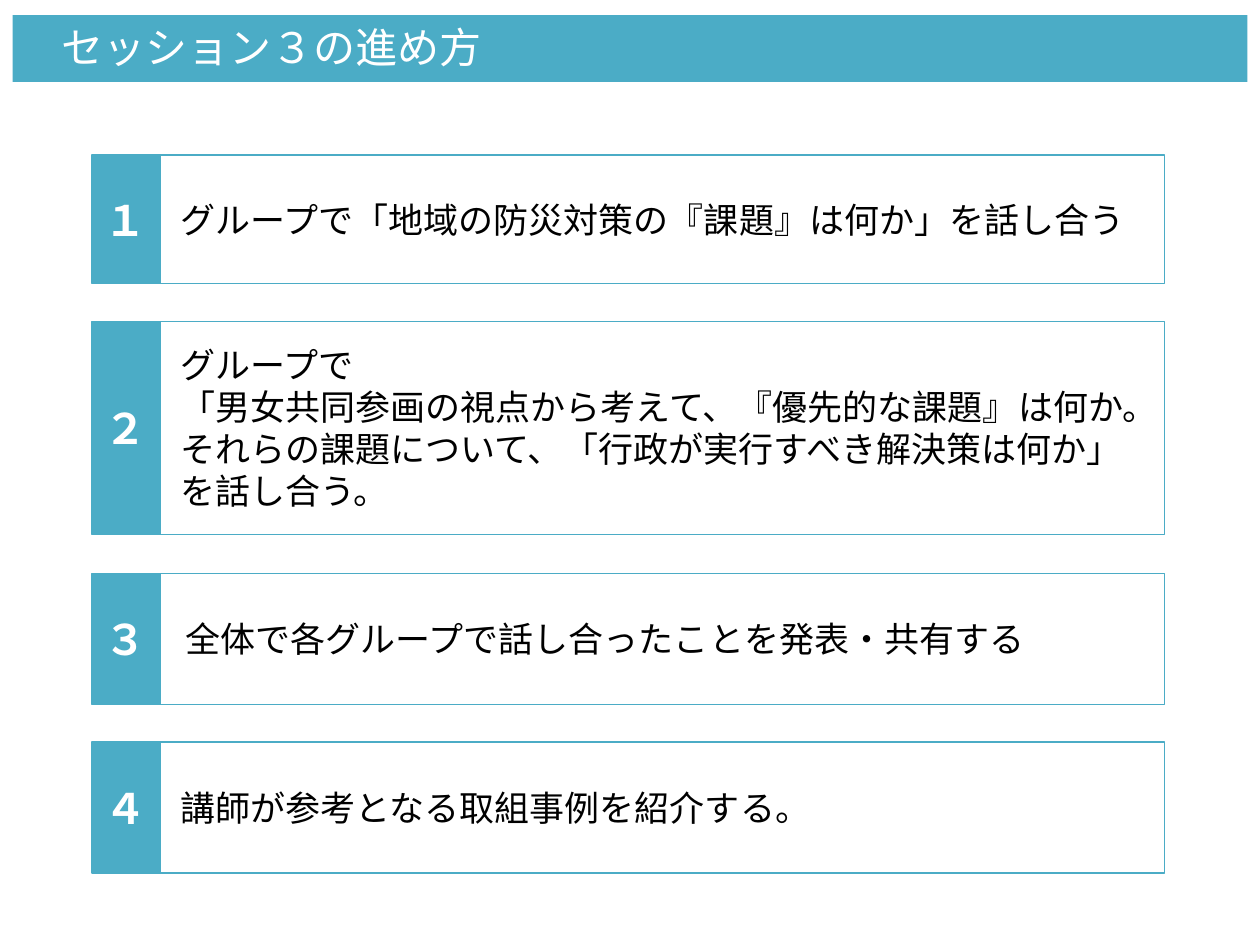
from pptx import Presentation
from pptx.dml.color import RGBColor
from pptx.enum.shapes import MSO_SHAPE
from pptx.enum.text import MSO_ANCHOR, PP_ALIGN
from pptx.util import Inches, Pt

RECTANGLE = MSO_SHAPE.RECTANGLE
MIDDLE = MSO_ANCHOR.MIDDLE
LEFT = PP_ALIGN.LEFT
CENTER = PP_ALIGN.CENTER

COLORS = {"accent": "4BACC6", "white": "FFFFFF", "black": "000000"}

STEPS = [
    ("１", "グループで「地域の防災対策の『課題』は何か」を話し合う", 1.23, 1.02, 0.2),
    (
        "２",
        "グループで\n「男女共同参画の視点から考えて、『優先的な課題』は何か。"
        "それらの課題について、「行政が実行すべき解決策は何か」を話し合う。",
        2.55, 1.69, 0.2,
    ),
    ("３", "全体で各グループで話し合ったことを発表・共有する", 4.55, 1.04, 0.24),
    ("４", "講師が参考となる取組事例を紹介する。", 5.89, 1.04, 0.2),
]


def color(name):
    return RGBColor.from_string(COLORS[name])


def write_text(shape, text, size=20, font="Calibri", ink="black", bold=False,
               align=LEFT, wrap=True, insets=(0.1, 0.05, 0.1, 0.05)):
    frame = shape.text_frame
    frame.word_wrap = wrap
    frame.vertical_anchor = MIDDLE
    (frame.margin_left, frame.margin_top,
     frame.margin_right, frame.margin_bottom) = map(Inches, insets)
    paragraph = frame.paragraphs[0]
    paragraph.text = text
    paragraph.alignment = align
    for run in paragraph.runs:
        run.font.name = font
        run.font.size = Pt(size)
        run.font.bold = bold
        run.font.color.rgb = color(ink)


class AgendaSlide:
    def __init__(self, slide, accent="accent", border=0.75):
        self.slide = slide
        self.accent = accent
        self.border = border

    def box(self, left, top, width, height, filled=True, outlined=True):
        shape = self.slide.shapes.add_shape(
            RECTANGLE, Inches(left), Inches(top), Inches(width), Inches(height))
        shape.shadow.inherit = False
        if filled:
            shape.fill.solid()
            shape.fill.fore_color.rgb = color(self.accent)
        else:
            shape.fill.background()
        if outlined:
            shape.line.color.rgb = color(self.accent)
            shape.line.width = Pt(self.border)
        else:
            shape.line.fill.background()
        return shape

    def title(self, text):
        banner = self.box(0.1, 0.12, 9.8, 0.53, outlined=False)
        write_text(banner, text, size=24, font="Arial", ink="white",
                   insets=(0.39, 0.05, 0.1, 0.08))

    def step(self, number, task, top, height, indent):
        panel = self.box(1.23, top, 8.01, height, filled=False)
        write_text(panel, task, insets=(indent, 0.05, 0.1, 0.05))
        badge = self.box(0.73, top, 0.54, height)
        write_text(badge, number, size=24, ink="white", bold=True,
                   align=CENTER, wrap=False)


def main():
    deck = Presentation()
    deck.slide_width = Inches(10)
    deck.slide_height = Inches(7.5)
    agenda = AgendaSlide(deck.slides.add_slide(deck.slide_layouts[6]))
    agenda.title("セッション３の進め方")
    for step in STEPS:
        agenda.step(*step)
    deck.save("out.pptx")


if __name__ == "__main__":
    main()
